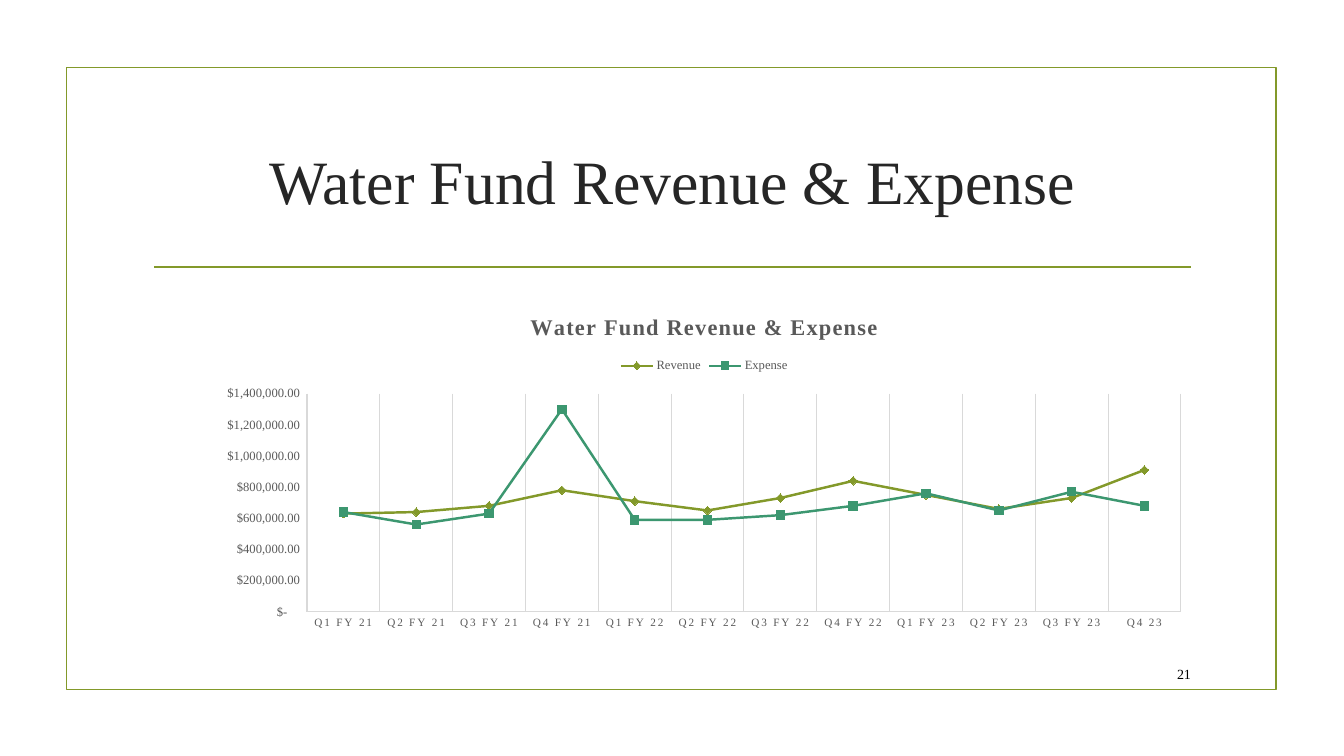
"""Build the Water Fund Revenue & Expense slide."""
from lxml import etree
from pptx import Presentation
from pptx import util as u
from pptx.chart.data import CategoryChartData
from pptx.dml.color import RGBColor
from pptx.enum import chart as ch, shapes, text
from pptx.oxml import ns

FONT = "Times New Roman"
OLIVE, GREEN, GREY, PALE = "83992A", "3C9770", "595959", "D9D9D9"
TITLE = "Water Fund Revenue & Expense"


def rgb(value):
    return RGBColor.from_string(value)


def write(tf, words, size, color, align, bold=False):
    tf.word_wrap = True
    tf.vertical_anchor = text.MSO_ANCHOR.MIDDLE
    p = tf.paragraphs[0]
    p.alignment = align
    r = p.add_run()
    r.text = words
    r.font.name, r.font.size, r.font.bold = FONT, u.Pt(size), bold
    r.font.color.rgb = rgb(color)
    return r


prs = Presentation()
prs.slide_width, prs.slide_height = u.Inches(13.33), u.Inches(7.5)
s = prs.slides.add_slide(prs.slide_layouts[5])

title = s.shapes.title
title.left, title.top = u.Inches(1.42), u.Inches(1.07)
title.width, title.height = u.Inches(10.5), u.Inches(1.43)
write(title.text_frame, TITLE, 44, "262626", text.PP_ALIGN.CENTER)

frame = s.shapes.add_shape(shapes.MSO_SHAPE.RECTANGLE, u.Inches(0.66),
                           u.Inches(0.67), u.Inches(12), u.Inches(6.17))
frame.shadow.inherit = False
frame.fill.background()
rule = s.shapes.add_connector(shapes.MSO_CONNECTOR.STRAIGHT, u.Inches(1.53),
                              u.Inches(2.65), u.Inches(11.81), u.Inches(2.65))
etree.SubElement(rule._element.spPr, ns.qn("a:effectLst"))
for sp in (frame, rule):
    sp.line.color.rgb = rgb(OLIVE)
    sp.line.width = u.Pt(1.25)

number = s.shapes.add_textbox(u.Inches(11.32), u.Inches(6.53),
                              u.Inches(0.59), u.Inches(0.31))
write(number.text_frame, "21", 10, "000000", text.PP_ALIGN.RIGHT)

data = CategoryChartData()
data.categories = [f"Q{q} FY {y}" for y in (21, 22, 23) for q in (1, 2, 3, 4)][:-1] + ["Q4 23"]
data.add_series("Revenue", [630000, 640000, 680000, 780000, 710000, 650000,
                            730000, 840000, 750000, 660000, 730000, 910000])
data.add_series("Expense", [640000, 560000, 630000, 1300000, 590000, 590000,
                            620000, 680000, 760000, 650000, 770000, 680000])
chart = s.shapes.add_chart(ch.XL_CHART_TYPE.LINE_MARKERS, u.Inches(2.06), u.Inches(2.94),
                           u.Inches(9.85), u.Inches(3.33), data).chart
chart.font.name, chart.font.size = FONT, u.Pt(10)
chart.font.color.rgb = rgb("000000")

chart.has_title = True
r = write(chart.chart_title.text_frame, TITLE, 16, GREY, text.PP_ALIGN.CENTER, bold=True)
r._r.get_or_add_rPr().set("spc", "100")
chart.chart_title.include_in_layout = False

chart.has_legend = True
chart.legend.position = ch.XL_LEGEND_POSITION.TOP
chart.legend.include_in_layout = False

cat, val = chart.category_axis, chart.value_axis
for axis in (cat, val):
    axis.major_tick_mark = axis.minor_tick_mark = ch.XL_TICK_MARK.NONE
    axis.format.line.color.rgb = rgb(PALE)
    axis.format.line.width = u.Pt(0.75)
for font, size in ((cat.tick_labels.font, 8), (val.tick_labels.font, 9), (chart.legend.font, 9)):
    font.name, font.size = FONT, u.Pt(size)
    font.color.rgb = rgb(GREY)
cat._element.xpath(".//a:defRPr")[0].set("spc", "120")
cat.has_major_gridlines = True
cat.major_gridlines.format.line.color.rgb = rgb(PALE)
cat.major_gridlines.format.line.width = u.Pt(0.75)
val.has_major_gridlines = False
val.minimum_scale, val.maximum_scale, val.major_unit = 0, 1400000, 200000
val.tick_labels.number_format = (
    r'_("$"* #,##0.00_);_("$"* \(#,##0.00\);_("$"* "-"??_);_(@_)')
val.tick_labels.number_format_is_linked = False

plot = chart.plots[0]
plot.vary_by_categories = False
styles = ((OLIVE, ch.XL_MARKER_STYLE.DIAMOND), (GREEN, ch.XL_MARKER_STYLE.SQUARE))
for series, (color, marker) in zip(plot.series, styles):
    series.smooth = False
    series.format.line.color.rgb = rgb(color)
    series.format.line.width = u.Pt(1.75)
    series.marker.style, series.marker.size = marker, 6
    series.marker.format.fill.solid()
    series.marker.format.fill.fore_color.rgb = rgb(color)
    series.marker.format.line.color.rgb = rgb(color)

area = chart._chartSpace.xpath("c:chart/c:plotArea")[0]
for old in area.xpath("c:layout"):
    area.remove(old)
layout = etree.Element(ns.qn("c:layout"))
area.insert(0, layout)
manual = etree.SubElement(layout, ns.qn("c:manualLayout"))
for tag, value in (("layoutTarget", "inner"), ("xMode", "edge"), ("yMode", "edge"),
                   ("x", "0.1"), ("y", "0.29"), ("w", "0.88"), ("h", "0.65")):
    etree.SubElement(manual, ns.qn("c:" + tag)).set("val", value)

prs.save("out.pptx")
